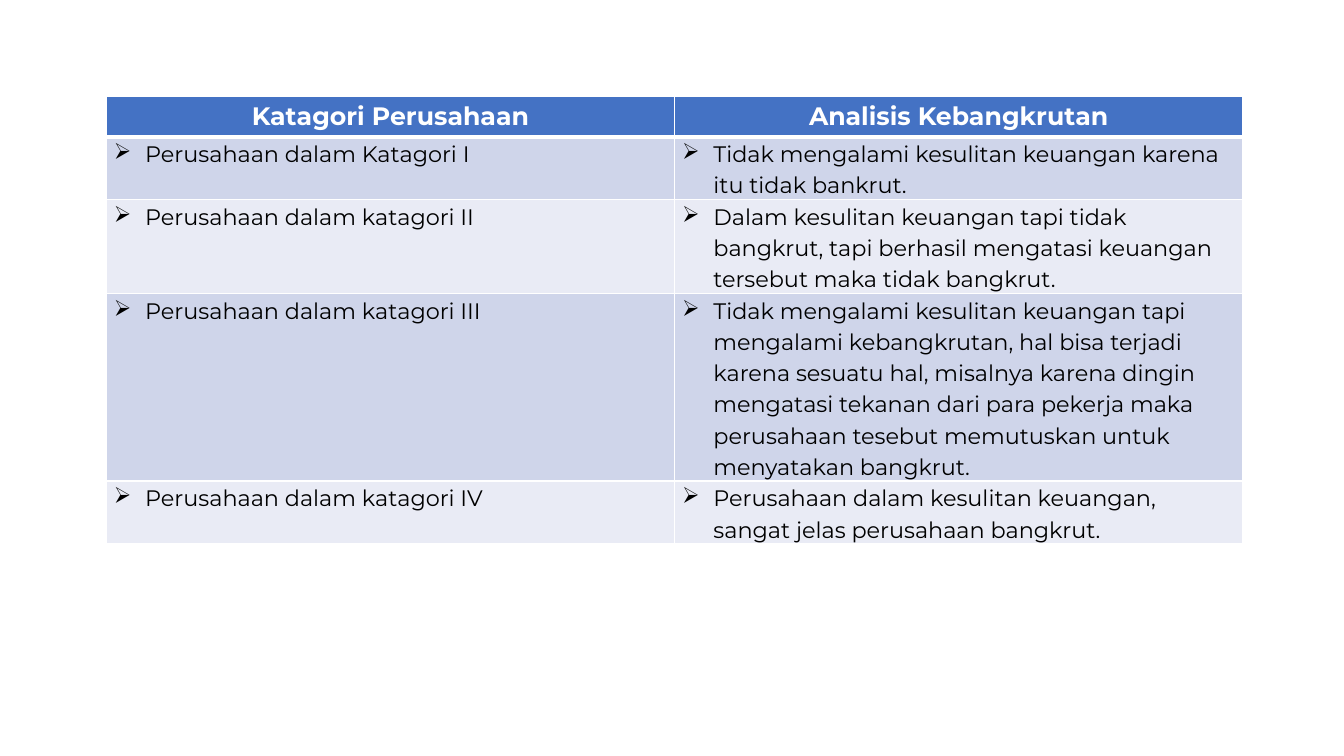
from lxml import etree
from pptx import Presentation
from pptx.dml.color import RGBColor
from pptx.enum.text import PP_ALIGN
from pptx.oxml.ns import qn
from pptx.util import Cm, Pt

COLORS = {
    "header": "4472C4",
    "odd": "CFD5EA",
    "even": "E9EBF5",
    "white": "FFFFFF",
    "black": "000000",
}
FONT = "Montserrat"
HEADERS = ["Katagori Perusahaan", "Analisis Kebangkrutan"]
CATEGORIES = [
    ("Perusahaan dalam Katagori I",
     "Tidak mengalami kesulitan keuangan karena itu tidak bankrut."),
    ("Perusahaan dalam katagori II",
     "Dalam kesulitan keuangan tapi tidak bangkrut, tapi berhasil mengatasi "
     "keuangan tersebut maka tidak bangkrut."),
    ("Perusahaan dalam katagori III",
     "Tidak mengalami kesulitan keuangan tapi mengalami kebangkrutan, hal bisa "
     "terjadi karena sesuatu hal, misalnya karena dingin mengatasi tekanan dari "
     "para pekerja maka perusahaan tesebut memutuskan untuk menyatakan bangkrut."),
    ("Perusahaan dalam katagori IV",
     "Perusahaan dalam kesulitan keuangan, sangat jelas perusahaan bangkrut."),
]


def rgb(name):
    return RGBColor.from_string(COLORS[name])


def set_borders(cell, top=1, bottom=1):
    tcPr = cell._tc.get_or_add_tcPr()
    widths = {"lnL": 1, "lnR": 1, "lnT": top, "lnB": bottom}
    for i, (side, width) in enumerate(widths.items()):
        ln = etree.Element(qn(f"a:{side}"), w=str(Pt(width)))
        fill = etree.SubElement(ln, qn("a:solidFill"))
        etree.SubElement(fill, qn("a:srgbClr"), val=COLORS["white"])
        tcPr.insert(i, ln)


def add_bullet(p, char="➢", indent=Cm(0.79)):
    pPr = p._p.get_or_add_pPr()
    pPr.set("marL", str(indent))
    pPr.set("indent", str(-indent))
    etree.SubElement(pPr, qn("a:buChar"), char=char)


def write_text(cell, text, size=16, color="black", bold=False,
               align=PP_ALIGN.LEFT, bullet=True):
    cell.margin_left = cell.margin_right = Cm(0.19)
    cell.margin_top = cell.margin_bottom = 0
    p = cell.text_frame.paragraphs[0]
    p.alignment = align
    p.line_spacing = 1.15
    if bullet:
        add_bullet(p)
    r = p.add_run()
    r.text = text
    r.font.name = FONT
    r.font.size = Pt(size)
    r.font.bold = bold
    r.font.color.rgb = rgb(color)


def fill_cell(cell, color):
    cell.fill.solid()
    cell.fill.fore_color.rgb = rgb(color)


def add_category_table(slide):
    rows = len(CATEGORIES) + 1
    table = slide.shapes.add_table(rows, len(HEADERS), Cm(2.68), Cm(2.42),
                                   Cm(28.64), Cm(1.03) * rows).table
    for cell, text in zip(table.rows[0].cells, HEADERS):
        fill_cell(cell, "header")
        set_borders(cell, bottom=3)
        write_text(cell, text, size=18, color="white", bold=True,
                   align=PP_ALIGN.CENTER, bullet=False)
    for i, texts in enumerate(CATEGORIES, start=1):
        for cell, text in zip(table.rows[i].cells, texts):
            fill_cell(cell, "odd" if i % 2 else "even")
            set_borders(cell, top=3 if i == 1 else 1)
            write_text(cell, text)


def main():
    prs = Presentation()
    prs.slide_width, prs.slide_height = Cm(33.87), Cm(19.05)
    slide = prs.slides.add_slide(prs.slide_layouts[6])
    add_category_table(slide)
    prs.save("out.pptx")


if __name__ == "__main__":
    main()
